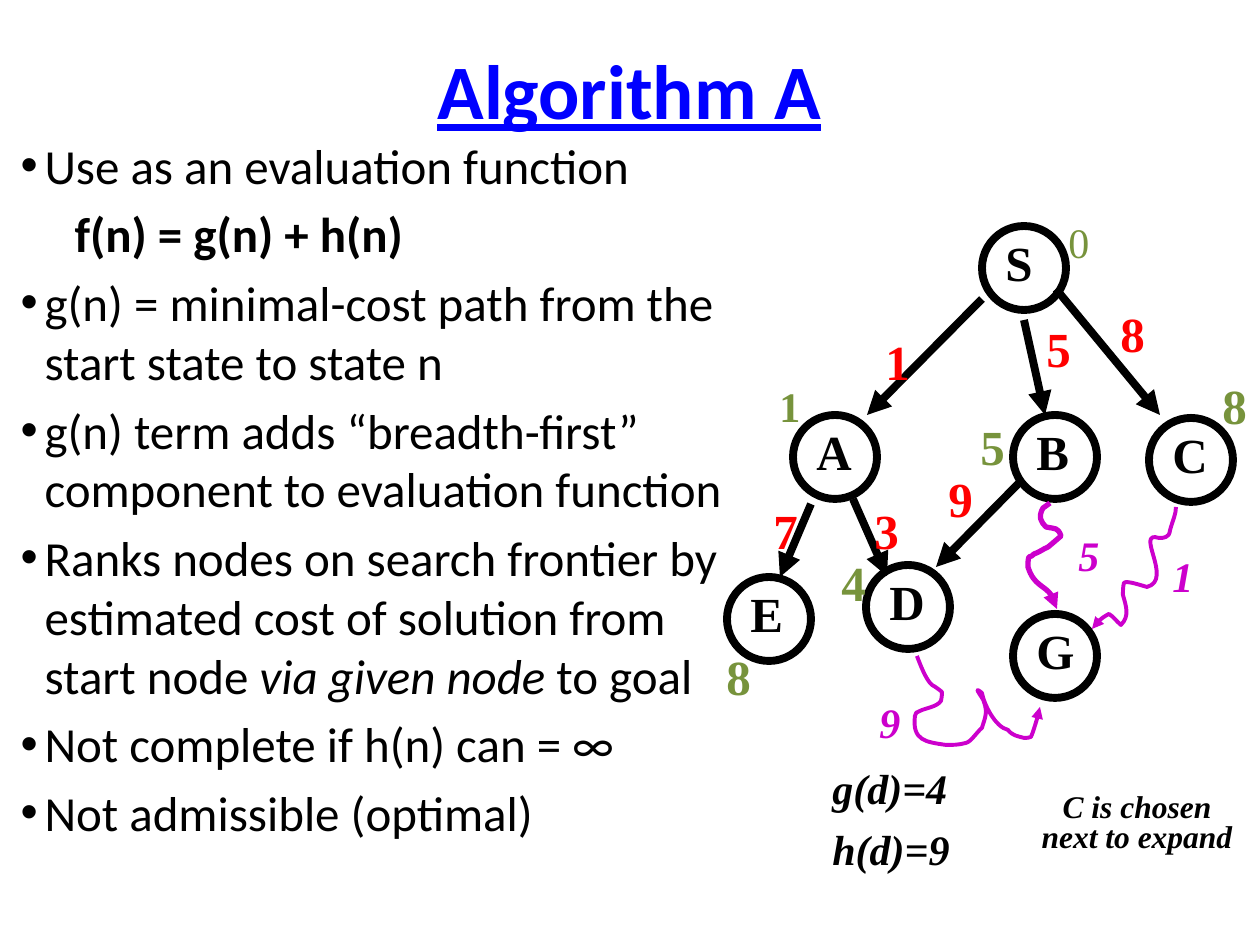
from typing import NamedTuple

from lxml import etree
from pptx import Presentation
from pptx.dml.color import RGBColor
from pptx.enum.shapes import MSO_CONNECTOR, MSO_SHAPE
from pptx.enum.text import MSO_ANCHOR, MSO_AUTO_SIZE, PP_ALIGN
from pptx.oxml.ns import qn
from pptx.util import Inches, Pt

CENTER, LEFT = PP_ALIGN.CENTER, PP_ALIGN.LEFT
MIDDLE, TOP = MSO_ANCHOR.MIDDLE, MSO_ANCHOR.TOP
FIT, FIXED = MSO_AUTO_SIZE.SHAPE_TO_FIT_TEXT, MSO_AUTO_SIZE.NONE
OVAL, STRAIGHT = MSO_SHAPE.OVAL, MSO_CONNECTOR.STRAIGHT

SCALE = Inches(1) / 126  # EMU per px
COLORS = {"title": "0000FF", "ink": "000000", "cost": "FF0000",
          "reached": "77933C", "estimate": "CC00CC"}
SANS, SERIF = "Calibri", "Times New Roman"
NODE_SIZE = 84
NODE_TEXT_OFFSET = 11
LABEL_SIZES = {28: (50, 72), 24: (47, 63)}


class Node(NamedTuple):
    name: str
    x: int
    y: int
    text_width: int


class Edge(NamedTuple):
    start: tuple[int, int]
    end: tuple[int, int]


class Label(NamedTuple):
    text: str
    x: int
    y: int
    color: str
    size: int = 28
    bold: bool = True
    italic: bool = False


class Route(NamedTuple):
    width: float
    points: list[tuple[int, int]]  # start, then three points per Bézier curve


class Note(NamedTuple):
    lines: list[str]
    box: tuple[int, int, int, int]
    size: int
    align: PP_ALIGN


BULLETS = [
    [("Use as an evaluation function", {})],
    [("f(n) = g(n) + h(n)", {"bold": True})],
    [("g(n) = minimal-cost path from the start state to state n", {})],
    [("g(n) term adds “breadth-first” component to evaluation function", {})],
    [("Ranks nodes on search frontier by estimated cost of solution from start node ", {}),
     ("via given node ", {"italic": True}), ("to goal", {})],
    [("Not complete if h(n) can = ∞", {})],
    [("Not admissible (optimal)", {})],
]
FORMULA_ROW = 1

NODES = [Node("S", 982, 226, 53), Node("B", 1013, 415, 58), Node("A", 793, 415, 60),
         Node("D", 866, 565, 60), Node("G", 1013, 614, 63), Node("C", 1149, 418, 60),
         Node("E", 727, 577, 58)]

EDGES = [Edge((982, 299), (867, 415)), Edge((1024, 320), (1045, 415)),
         Edge((1056, 289), (1160, 415)), Edge((853, 499), (887, 576)),
         Edge((1019, 483), (936, 567)), Edge((811, 504), (780, 577))]

LABELS = [
    # Step costs
    Label("1", 873, 325, "cost"), Label("5", 1034, 312, "cost"),
    Label("8", 1108, 297, "cost"), Label("3", 862, 494, "cost"),
    Label("9", 936, 462, "cost"), Label("7", 761, 494, "cost"),
    # Cost to reach each node
    Label("0", 1056, 210, "reached", 24, False), Label("1", 767, 374, "reached", 24),
    Label("4", 829, 546, "reached"), Label("5", 968, 410, "reached"),
    Label("8", 1210, 369, "reached"), Label("8", 714, 640, "reached"),
    # Estimates to the goal
    Label("5", 1066, 523, "estimate", 24, italic=True),
    Label("1", 1160, 544, "estimate", 24, italic=True),
    Label("9", 867, 690, "estimate", 24, italic=True),
]

ROUTES = [
    # B to G
    Route(3, [(1050, 503), (1047, 505), (1045, 507), (1043, 508), (1038, 517),
              (1041, 522), (1046, 527), (1055, 529), (1058, 527), (1061, 536),
              (1061, 536), (1053, 543), (1048, 547), (1043, 549), (1040, 552),
              (1034, 554), (1033, 556), (1031, 556), (1029, 557), (1028, 559),
              (1028, 563), (1028, 567), (1034, 586), (1053, 586), (1057, 609)]),
    # C to G
    Route(2.25, [(1176, 507), (1176, 514), (1173, 520), (1171, 527), (1169, 532),
                 (1171, 534), (1166, 537), (1164, 538), (1162, 538), (1159, 538),
                 (1134, 530), (1174, 580), (1147, 587), (1143, 586), (1126, 580),
                 (1124, 583), (1123, 587), (1123, 591), (1123, 595), (1126, 606),
                 (1130, 616), (1121, 625), (1116, 621), (1114, 617), (1109, 614),
                 (1109, 614), (1103, 617), (1100, 620), (1096, 622), (1095, 626),
                 (1092, 629)]),
    # D to G
    Route(2.25, [(917, 656), (920, 664), (926, 680), (932, 685), (936, 687),
                 (942, 692), (942, 692), (942, 694), (942, 697), (941, 701),
                 (937, 707), (926, 708), (920, 711), (917, 712), (915, 713),
                 (915, 716), (912, 741), (926, 742), (946, 745), (953, 745),
                 (959, 745), (966, 743), (971, 742), (977, 732), (982, 728),
                 (985, 718), (988, 713), (984, 702), (984, 699), (971, 684),
                 (982, 693), (984, 704), (995, 727), (1008, 730), (1013, 736),
                 (1017, 736), (1024, 738), (1027, 738), (1029, 738), (1031, 737),
                 (1033, 733), (1037, 719), (1038, 716), (1038, 712), (1040, 707),
                 (1040, 707)]),
]

NOTES = [Note(["g(d)=4", "h(d)=9"], (820, 766, 199, 118), 24, LEFT),
         Note(["C is chosen next to expand"], (1024, 788, 226, 73), 18, CENTER)]


def px(*lengths: int) -> list[int]:
    return [round(length * SCALE) for length in lengths]


def set_values(target, values: dict) -> None:
    for name, value in values.items():
        setattr(target, name, value)


def add_span(para, text: str, font: str, size: int, color: str, **extra) -> None:
    span = para.add_run()
    span.text = text
    set_values(span.font, {"name": font, "size": Pt(size), **extra})
    span.font.color.rgb = RGBColor.from_string(COLORS[color])


def place(shape, box: tuple[int, int, int, int]) -> None:
    set_values(shape, dict(zip(("left", "top", "width", "height"), px(*box))))


def set_line(shape, color: str, width: float, arrow: bool = False) -> None:
    shape.line.color.rgb = RGBColor.from_string(COLORS[color])
    shape.line.width = Pt(width)
    if arrow:
        etree.SubElement(shape.line._get_or_add_ln(), qn("a:tailEnd"), type="triangle")


def add_box(page, box: tuple[int, int, int, int], wrap: bool):
    frame = page.shapes.add_textbox(*px(*box)).text_frame
    set_values(frame, {"word_wrap": wrap, "auto_size": FIT})
    return frame


def add_label(page, label: Label, width: int = 0) -> None:
    default_width, height = LABEL_SIZES[label.size]
    frame = add_box(page, (label.x, label.y, width or default_width, height), False)
    add_span(frame.paragraphs[0], label.text, SERIF, label.size, label.color,
             bold=label.bold, italic=label.italic)


def add_node(page, node: Node) -> None:
    circle = page.shapes.add_shape(OVAL, *px(node.x, node.y, NODE_SIZE, NODE_SIZE))
    circle.shadow.inherit = False
    circle.fill.background()
    set_line(circle, "ink", 4.5)
    add_label(page, Label(node.name, node.x + NODE_TEXT_OFFSET, node.y, "ink"), node.text_width)


def add_edge(page, edge: Edge) -> None:
    arrow = page.shapes.add_connector(STRAIGHT, *px(*edge.start, *edge.end))
    set_line(arrow, "ink", 4.5, arrow=True)
    etree.SubElement(arrow._element.spPr, qn("a:effectLst"))


def add_route(page, route: Route) -> None:
    start, *rest = route.points
    builder = page.shapes.build_freeform(*start, scale=SCALE)
    builder.add_line_segments(rest, close=False)
    curve = builder.convert_to_shape()
    # Join each three straight segments into one Bézier curve
    segments = list(curve._element.iter(qn("a:lnTo")))
    for first in range(0, len(segments), 3):
        bezier = etree.Element(qn("a:cubicBezTo"))
        segments[first].addprevious(bezier)
        for segment in segments[first:first + 3]:
            bezier.append(segment[0])
            segment.getparent().remove(segment)
    curve.shadow.inherit = False
    curve.fill.background()
    set_line(curve, "estimate", route.width, arrow=True)


def add_note(page, note: Note) -> None:
    frame = add_box(page, note.box, True)
    for row, line in enumerate(note.lines):
        para = frame.add_paragraph() if row else frame.paragraphs[0]
        set_values(para, {"alignment": note.align, "line_spacing": 0.8,
                          "space_before": Pt(note.size / 2)})
        add_span(para, line, SERIF, note.size, "ink", bold=True, italic=True)


def fill_title(title) -> None:
    place(title, (94, 10, 1071, 158))
    set_values(title.text_frame, {"vertical_anchor": MIDDLE, "auto_size": FIXED})
    para = title.text_frame.paragraphs[0]
    para.alignment = CENTER
    add_span(para, "Algorithm A", SANS, 44, "title", bold=True, underline=True)


def fill_body(body) -> None:
    place(body, (8, 129, 756, 756))
    set_values(body.text_frame, {"vertical_anchor": TOP, "auto_size": FIXED})
    for row, spans in enumerate(BULLETS):
        para = body.text_frame.add_paragraph() if row else body.text_frame.paragraphs[0]
        formula = row == FORMULA_ROW
        para.level = 1 if formula else 0
        margin, hanging = px(78 if formula else 24, -24)
        props = para._p.get_or_add_pPr()
        props.set("marL", str(margin))
        props.set("indent", str(hanging))
        if formula:
            etree.SubElement(props, qn("a:buNone"))
        for text, extra in spans:
            add_span(para, text, SANS, 28, "ink", **extra)


def main() -> None:
    deck = Presentation()
    set_values(deck, dict(zip(("slide_width", "slide_height"), px(1260, 945))))
    page = deck.slides.add_slide(deck.slide_layouts[1])
    fill_title(page.shapes.title)
    fill_body(page.placeholders[1])

    # Search graph, then its labels and notes
    for draw, items in ((add_node, NODES), (add_edge, EDGES), (add_route, ROUTES),
                        (add_label, LABELS), (add_note, NOTES)):
        for item in items:
            draw(page, item)
    deck.save("out.pptx")


if __name__ == "__main__":
    main()
